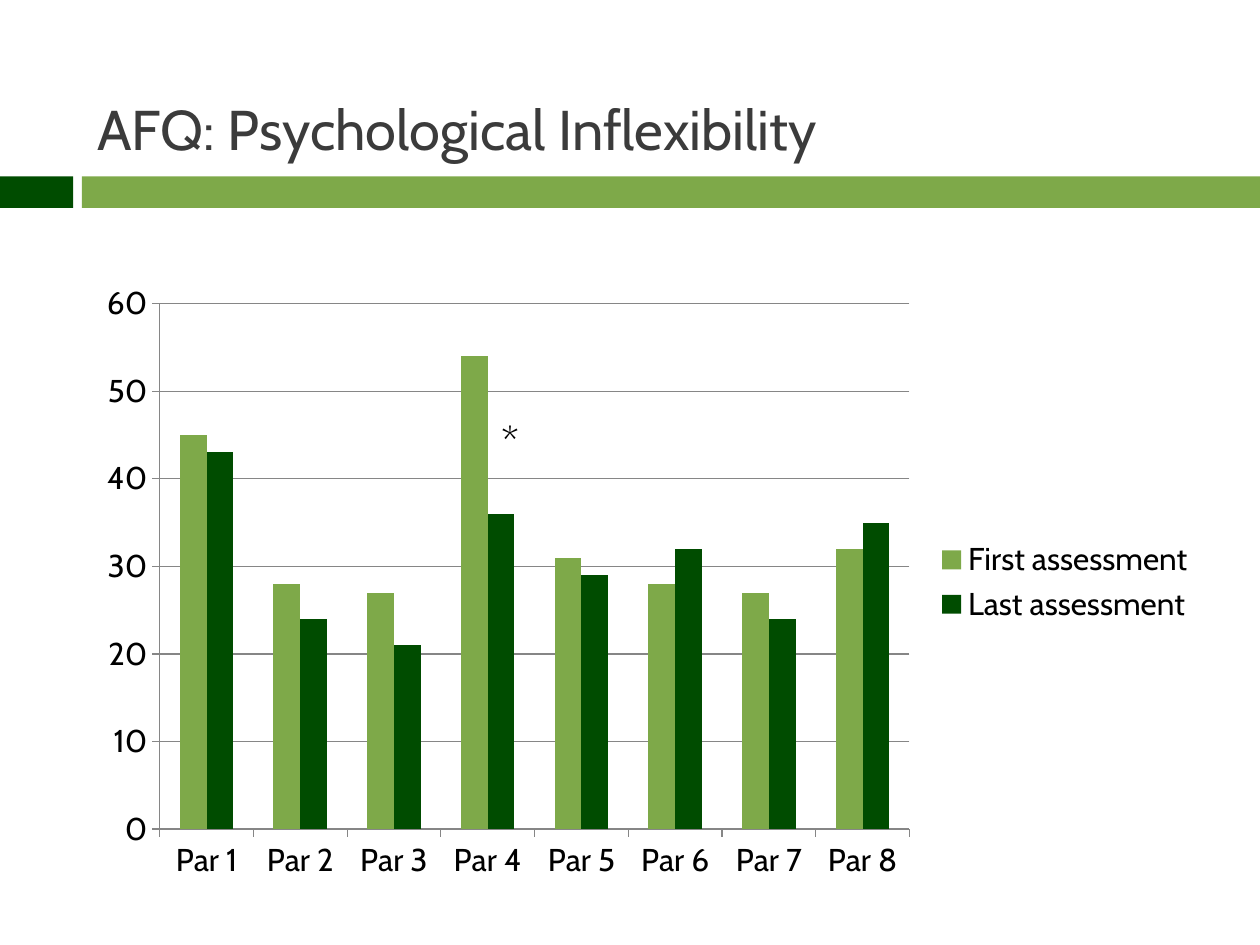
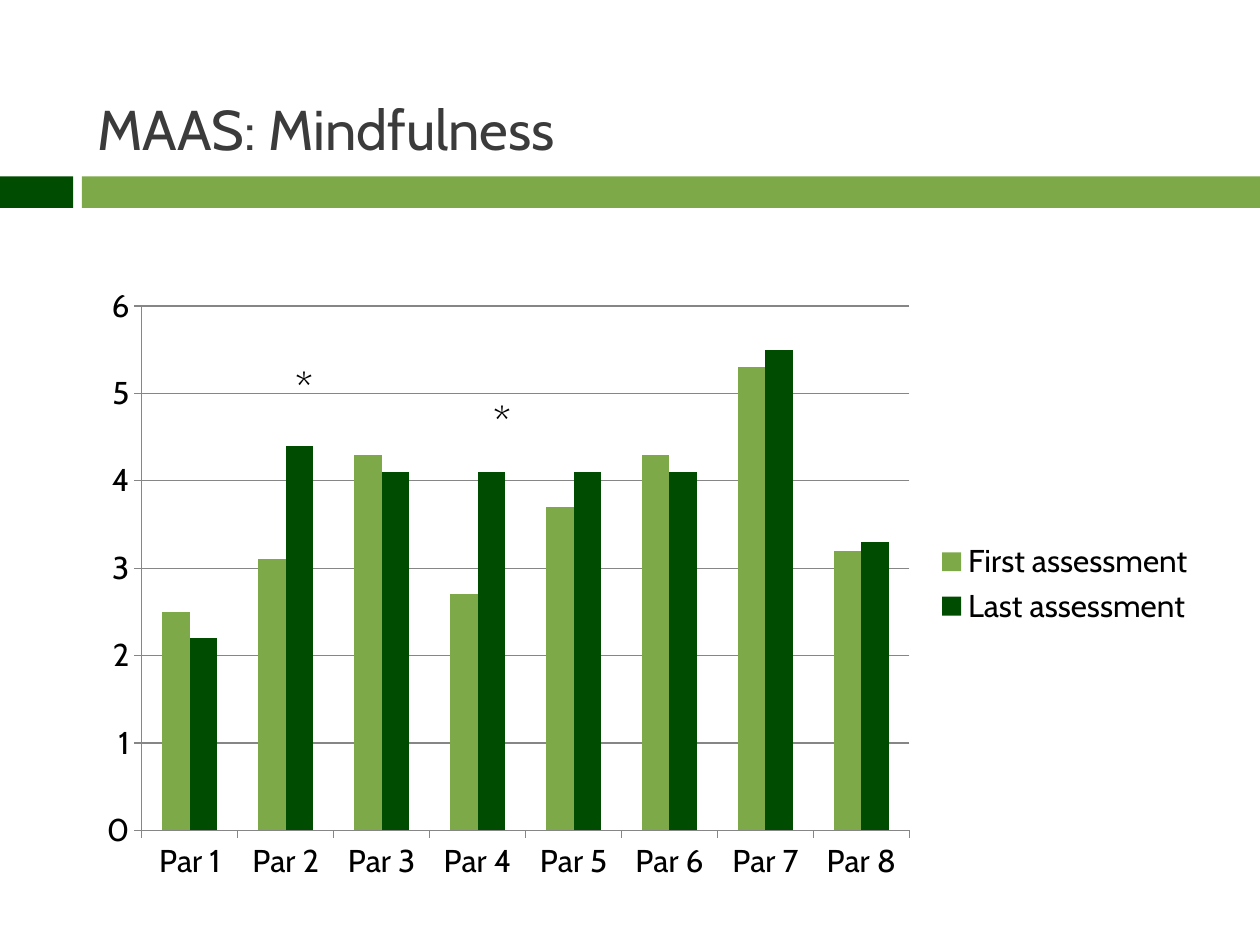
from pptx import Presentation
from pptx.chart.data import CategoryChartData
from pptx.dml.color import RGBColor
from pptx.enum.chart import XL_CHART_TYPE, XL_LEGEND_POSITION, XL_TICK_MARK
from pptx.enum.shapes import MSO_SHAPE
from pptx.enum.text import MSO_ANCHOR, MSO_AUTO_SIZE, PP_ALIGN
from pptx.util import Pt

COLUMNS = XL_CHART_TYPE.COLUMN_CLUSTERED
LEGEND_RIGHT = XL_LEGEND_POSITION.RIGHT
TICK_OUT = XL_TICK_MARK.OUTSIDE
RECT = MSO_SHAPE.RECTANGLE
BOTTOM = MSO_ANCHOR.BOTTOM
NO_FIT, GROW = MSO_AUTO_SIZE.NONE, MSO_AUTO_SIZE.SHAPE_TO_FIT_TEXT
LEFT = PP_ALIGN.LEFT

EMU_PER_PX = 9144  # 100 px to the inch
TITLE_ONLY = 5
FONT = "Cabin"
DARK_GREEN, LIGHT_GREEN = "004C00", "7EA949"
TITLE_GREY, LINE_GREY, BLACK = "3B3B3B", "868686", "000000"

PARTICIPANTS = [f"Par {n}" for n in range(1, 9)]
ASSESSMENTS = [("First assessment", LIGHT_GREEN), ("Last assessment", DARK_GREEN)]


def px(*lengths):
    return [length * EMU_PER_PX for length in lengths]


def rgb(hex_color):
    return RGBColor.from_string(hex_color)


class Deck:
    def __init__(self):
        self.prs = Presentation()
        self.prs.slide_width, self.prs.slide_height = px(1000, 750)
        self.s = None

    def style(self, font, size, color):
        font.name = FONT
        font.size = Pt(size)
        font.color.rgb = rgb(color)

    def run(self, p, text, size, color):
        r = p.add_run()
        r.text = text
        self.style(r.font, size, color)

    def slide(self, title):
        """Start a slide with the shared bands and title."""
        self.s = self.prs.slides.add_slide(self.prs.slide_layouts[TITLE_ONLY])
        self.band(0, 58, DARK_GREEN)
        self.band(65, 935, LIGHT_GREEN)
        self.title(title)

    def band(self, x, w, color):
        sp = self.s.shapes.add_shape(RECT, *px(x, 140, w, 25))
        sp.shadow.inherit = False
        sp.fill.solid()
        sp.fill.fore_color.rgb = rgb(color)
        sp.line.fill.background()

    def title(self, text):
        sp = self.s.shapes.title
        sp.left, sp.top, sp.width, sp.height = px(67, 25, 892, 108)
        tf = sp.text_frame
        tf.auto_size = NO_FIT
        tf.vertical_anchor = BOTTOM
        p = tf.paragraphs[0]
        p.alignment = LEFT
        self.run(p, text, 32, TITLE_GREY)

    def star(self, x, y):
        """Mark a significant change above a pair of columns."""
        tf = self.s.shapes.add_textbox(*px(x, y, 31, 50)).text_frame
        tf.word_wrap = True
        tf.auto_size = GROW
        self.run(tf.paragraphs[0], "*", 24, BLACK)

    def chart(self, top, height, first, last, step):
        data = CategoryChartData()
        data.categories = PARTICIPANTS
        for (name, _), values in zip(ASSESSMENTS, (first, last)):
            data.add_series(name, values)
        frame = self.s.shapes.add_chart(COLUMNS, *px(67, top, 892, height), data)
        chart = frame.chart
        chart.has_title = False
        self.style(chart.font, 18, BLACK)
        chart.has_legend = True
        chart.legend.position = LEGEND_RIGHT
        chart.legend.include_in_layout = False

        plot = chart.plots[0]
        plot.gap_width = 150
        plot.vary_by_categories = False
        for series, (_, color) in zip(plot.series, ASSESSMENTS):
            series.format.fill.solid()
            series.format.fill.fore_color.rgb = rgb(color)

        value_axis = chart.value_axis
        value_axis.minimum_scale = 0
        value_axis.maximum_scale = 6 * step
        value_axis.major_unit = step
        value_axis.has_major_gridlines = True
        for axis in (chart.category_axis, value_axis):
            axis.major_tick_mark = TICK_OUT
            self.line(axis.format.line)
        self.line(value_axis.major_gridlines.format.line)

    def line(self, line):
        line.color.rgb = rgb(LINE_GREY)
        line.width = Pt(0.75)


def main():
    deck = Deck()

    deck.slide("AFQ: Psychological Inflexibility")
    deck.chart(216, 492,
               first=[45, 28, 27, 54, 31, 28, 27, 32],
               last=[43, 24, 21, 36, 29, 32, 24, 35],
               step=10)
    deck.star(388, 325)

    deck.slide("MAAS: Mindfulness")
    deck.chart(218, 491,
               first=[2.5, 3.1, 4.3, 2.7, 3.7, 4.3, 5.3, 3.2],
               last=[2.2, 4.4, 4.1, 4.1, 4.1, 4.1, 5.5, 3.3],
               step=1)
    deck.star(225, 282)
    deck.star(382, 309)

    deck.prs.save("out.pptx")


if __name__ == "__main__":
    main()
